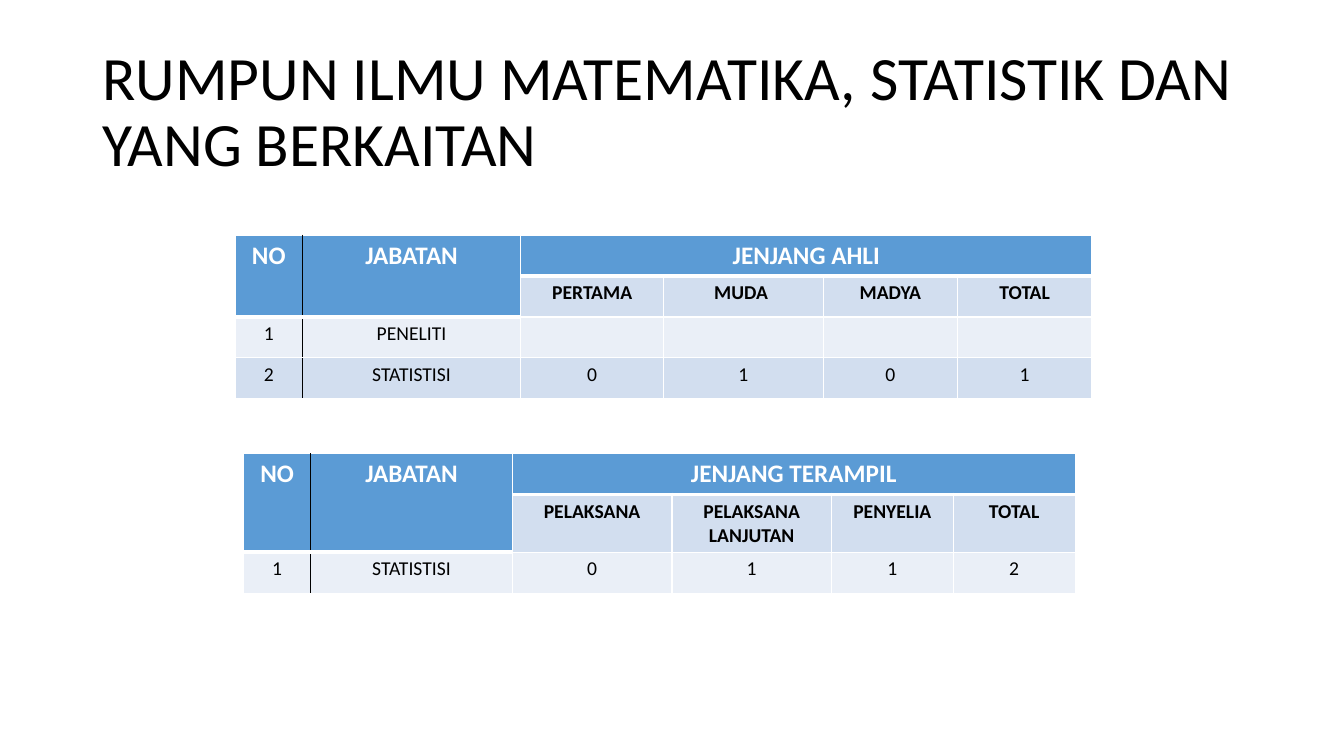
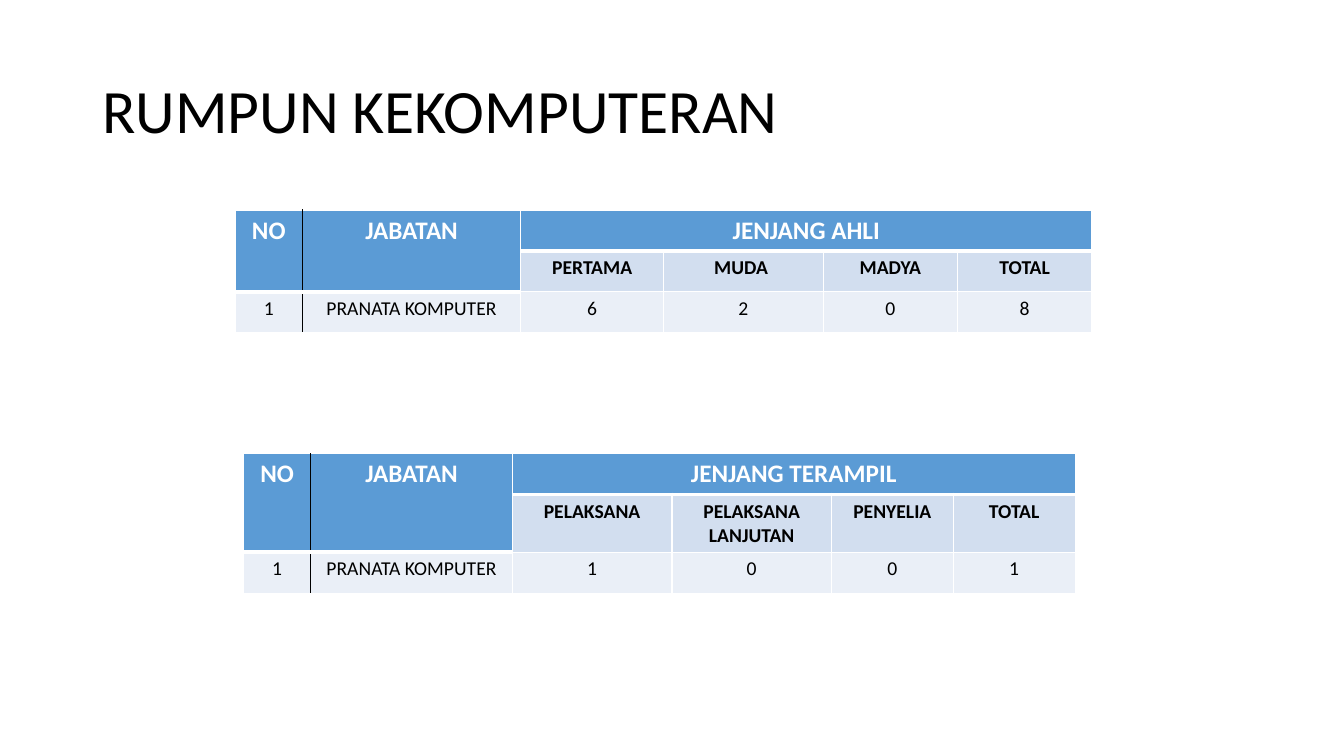
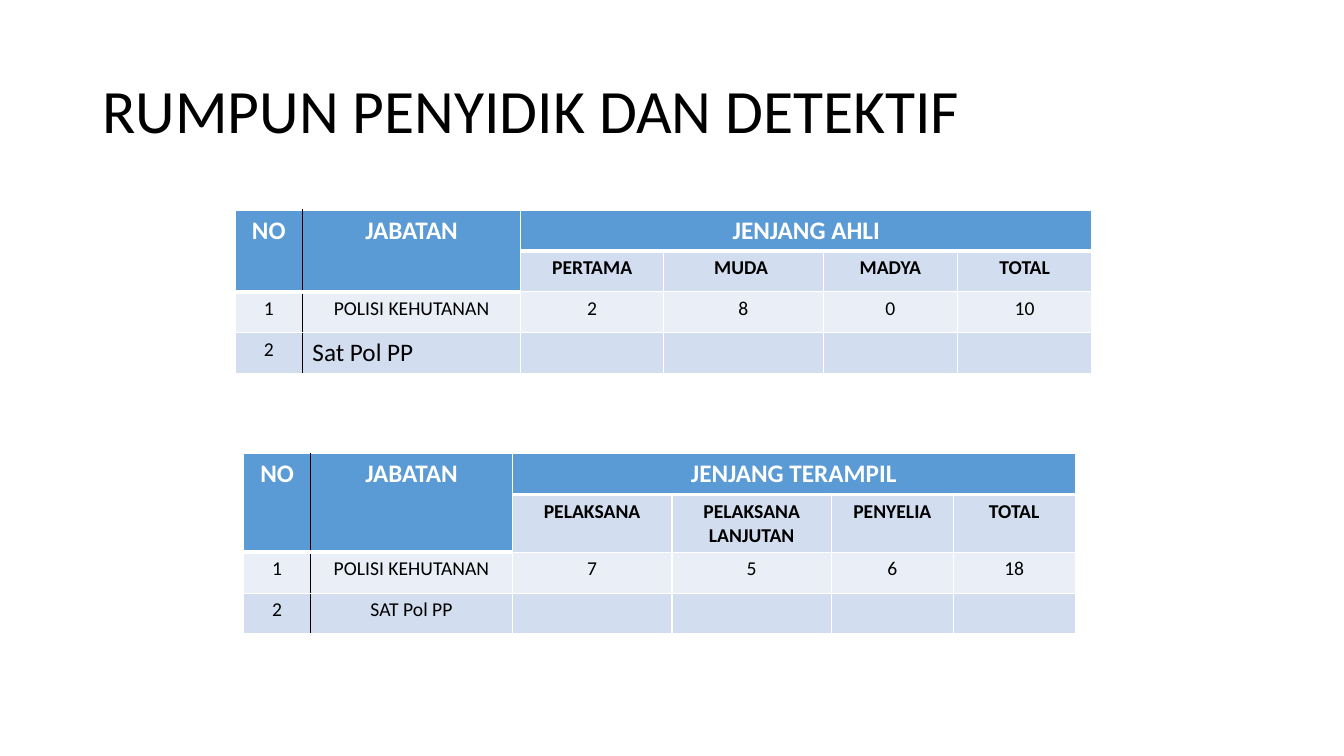
import pptx
import pptx.dml.color
import pptx.enum.text
import pptx.oxml
import pptx.oxml.ns
import pptx.util

RGBColor = pptx.dml.color.RGBColor
ALIGN = pptx.enum.text.PP_ALIGN
ANCHOR = pptx.enum.text.MSO_ANCHOR

# Shared look
BLACK = RGBColor(0x00, 0x00, 0x00)
WHITE = RGBColor(0xFF, 0xFF, 0xFF)
HEADER_BLUE = RGBColor(0x5B, 0x9B, 0xD5)
BAND_DARK = RGBColor(0xD2, 0xDE, 0xEF)
BAND_LIGHT = RGBColor(0xEA, 0xEF, 0xF7)
FONT = "Calibri"

TITLE_FONT = {"name": FONT, "size": pptx.util.Pt(44), "bold": False}
HEADER_FONT = {"name": FONT, "size": pptx.util.Pt(18), "bold": True}
LEVEL_FONT = {"name": FONT, "size": pptx.util.Pt(14), "bold": True}
BODY_FONT = {"name": FONT, "size": pptx.util.Pt(14), "bold": False}
LARGE_FONT = {"name": FONT, "size": pptx.util.Pt(18), "bold": False}

# The slide is a grid of 160 by 90 units, twelve to the inch
SLIDE_COLUMNS, SLIDE_ROWS = 160, 90
TITLE_AREA = {"left": 11, "top": 4.8, "width": 138, "height": 17.4}
ROW = 4.87
TWO_LINE_ROW = 6.87

# The two kinds of table: left edge, column widths, level row and headings
AHLI = {
    "left": 28,
    "columns": (8, 26, 17, 19, 16, 16),
    "level_row": ROW,
    "heading": "JENJANG AHLI",
    "levels": ("PERTAMA", "MUDA ", "MADYA", "TOTAL"),
}
TERAMPIL = {
    "left": 29,
    "columns": (8, 24, 19, 19, 14.5, 14.5),
    "level_row": TWO_LINE_ROW,
    "heading": "JENJANG TERAMPIL",
    "levels": ("PELAKSANA", "PELAKSANA LANJUTAN", "PENYELIA", "TOTAL"),
}
TERAMPIL_TOP = 54

NO_COUNTS = ("", "", "", "")

# Title, top of the first table, rows of both tables
SECTIONS = (
    ("RUMPUN ILMU MATEMATIKA, STATISTIK DAN YANG BERKAITAN", 28,
     (("PENELITI", *NO_COUNTS), ("STATISTISI", 0, 1, 0, 1)),
     (("STATISTISI", 0, 1, 1, 2),)),
    ("RUMPUN KEKOMPUTERAN", 25,
     (("PRANATA KOMPUTER", 6, 2, 0, 8),),
     (("PRANATA KOMPUTER", 1, 0, 0, 1),)),
    ("RUMPUN PENYIDIK DAN DETEKTIF", 25,
     (("POLISI KEHUTANAN", 2, 8, 0, 10), ("Sat Pol PP", *NO_COUNTS)),
     (("POLISI KEHUTANAN", 7, 5, 6, 18), ("SAT Pol PP", *NO_COUNTS))),
)
LEFT_ALIGNED = "Sat Pol PP"


def grid(units):
    return pptx.util.Inches(units / 12)


def apply_format(target, values):
    for name, value in values.items():
        setattr(target, name, value)


def write(paragraph, text, font, color, alignment):
    paragraph.alignment = alignment
    if text:
        run = paragraph.add_run()
        run.text = text
        apply_format(run.font, font)
        run.font.color.rgb = color


def add_title(slide, text):
    title = slide.shapes.title
    apply_format(title, {side: grid(units) for side, units in TITLE_AREA.items()})
    apply_format(title.text_frame, {
        "word_wrap": True,
        "vertical_anchor": ANCHOR.MIDDLE,
        "auto_size": pptx.enum.text.MSO_AUTO_SIZE.NONE,
    })
    paragraph = title.text_frame.paragraphs[0]
    paragraph.line_spacing = 0.9
    write(paragraph, text, TITLE_FONT, BLACK, ALIGN.LEFT)


def set_borders(cell, row, column):
    """White rules, black between number and position, thick under headings."""
    under_heading = row == 0 or (row == 1 and column < 2)
    borders = (
        ("L", BLACK if column == 1 else WHITE, 1),
        ("R", BLACK if column == 0 else WHITE, 1),
        ("T", WHITE, 1),
        ("B", WHITE, 3 if under_heading else 1),
    )
    properties = cell._tc.get_or_add_tcPr()
    for order, (side, color, points) in enumerate(borders):
        properties.insert(order, pptx.oxml.parse_xml(
            f'<a:ln{side} {pptx.oxml.ns.nsdecls("a")} w="{pptx.util.Pt(points)}">'
            f'<a:solidFill><a:srgbClr val="{color}"/></a:solidFill></a:ln{side}>'))


def cell_style(row, column, text):
    """Fill, font, text colour and alignment for a place in the table."""
    if row == 0 or (row == 1 and column < 2):
        return HEADER_BLUE, HEADER_FONT, WHITE, ALIGN.CENTER
    if row == 1:
        return BAND_DARK, LEVEL_FONT, BLACK, ALIGN.CENTER
    band = BAND_DARK if row % 2 else BAND_LIGHT
    if text == LEFT_ALIGNED:
        return band, LARGE_FONT, BLACK, ALIGN.LEFT
    return band, BODY_FONT, BLACK, ALIGN.CENTER


def add_position_table(slide, kind, top, positions):
    rows = [("NO", "JABATAN", kind["heading"], "", "", ""),
            ("", "", *kind["levels"])]
    rows += [(number, *position) for number, position in enumerate(positions, 1)]
    heights = [ROW, kind["level_row"]] + [ROW] * len(positions)
    table = slide.shapes.add_table(
        len(rows), len(kind["columns"]), grid(kind["left"]), grid(top),
        grid(sum(kind["columns"])), grid(sum(heights))).table
    apply_format(table, {"first_row": False, "horz_banding": False})
    for column, width in zip(table.columns, kind["columns"]):
        column.width = grid(width)
    for row, height in zip(table.rows, heights):
        row.height = grid(height)

    # Headings that span rows or columns
    for first, last in (((0, 0), (1, 0)), ((0, 1), (1, 1)), ((0, 2), (0, 5))):
        table.cell(*first).merge(table.cell(*last))

    for row, values in enumerate(rows):
        for column, value in enumerate(values):
            cell = table.cell(row, column)
            text = str(value)
            fill, font, color, alignment = cell_style(row, column, text)
            cell.fill.solid()
            cell.fill.fore_color.rgb = fill
            set_borders(cell, row, column)
            write(cell.text_frame.paragraphs[0], text, font, color, alignment)


def main():
    deck = pptx.Presentation()
    deck.slide_width, deck.slide_height = grid(SLIDE_COLUMNS), grid(SLIDE_ROWS)
    title_only = deck.slide_layouts[5]
    for title, ahli_top, ahli, terampil in SECTIONS:
        slide = deck.slides.add_slide(title_only)
        add_title(slide, title)
        add_position_table(slide, AHLI, ahli_top, ahli)
        add_position_table(slide, TERAMPIL, TERAMPIL_TOP, terampil)
    deck.save("out.pptx")


if __name__ == "__main__":
    main()
